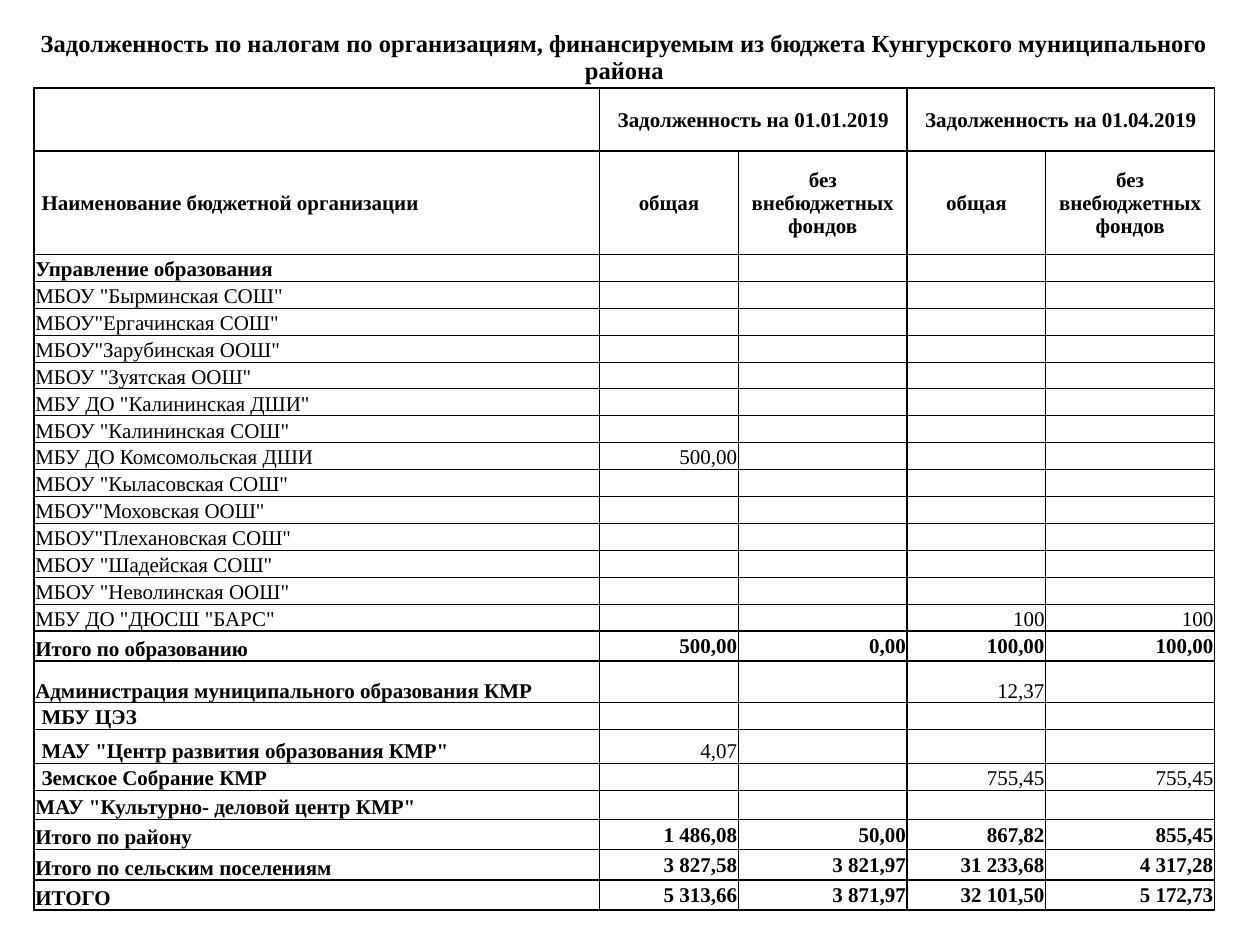
from pptx import Presentation, util as u
from pptx.dml.color import RGBColor
from pptx.enum import text
from pptx.oxml.ns import qn
from lxml import etree

FONT = "Times New Roman"
BLACK, WHITE = "000000", "FFFFFF"
THIN, THICK = 0.5, 1


def color(value):
    return RGBColor.from_string(value)


def set_borders(cell, widths):
    """Draw left, right, top and bottom lines; a width of 0 means no line."""
    properties = cell._tc.get_or_add_tcPr()
    for index, (side, width) in enumerate(zip(("lnL", "lnR", "lnT", "lnB"), widths)):
        line = etree.Element(qn(f"a:{side}"), w=str(u.Pt(width)))
        if width:
            fill = etree.SubElement(line, qn("a:solidFill"))
            etree.SubElement(fill, qn("a:srgbClr"), val=BLACK)
        else:
            etree.SubElement(line, qn("a:noFill"))
        properties.insert(index, line)


# Table content: header rows, then one row per organisation
header = [
    ["Задолженность по налогам по организациям, финансируемым из бюджета "
     "Кунгурского муниципального района", "", "", "", ""],
    ["", "Задолженность на 01.01.2019", "", "Задолженность на 01.04.2019", ""],
    ["Наименование бюджетной организации"] + ["общая", "без внебюджетных фондов"] * 2,
]
empty = [""] * 4
education = [
    ["Управление образования", *empty],
    ['МБОУ "Бырминская СОШ"', *empty],
    ['МБОУ"Ергачинская СОШ"', *empty],
    ['МБОУ"Зарубинская ООШ"', *empty],
    ['МБОУ "Зуятская ООШ"', *empty],
    ['МБУ ДО "Калининская ДШИ"', *empty],
    ['МБОУ "Калининская СОШ"', *empty],
    ["МБУ ДО Комсомольская ДШИ", "500,00", "", "", ""],
    ['МБОУ "Кыласовская СОШ"', *empty],
    ['МБОУ"Моховская ООШ"', *empty],
    ['МБОУ"Плехановская СОШ"', *empty],
    ['МБОУ "Шадейская СОШ"', *empty],
    ['МБОУ "Неволинская ООШ"', *empty],
    ['МБУ ДО "ДЮСШ "БАРС"', "", "", "100", "100"],
]
summary = [
    ["Итого по образованию", "500,00", "0,00", "100,00", "100,00"],
    ["Администрация муниципального образования КМР", "", "", "12,37", ""],
    ["МБУ ЦЭЗ", *empty],
    ['МАУ "Центр развития образования КМР"', "4,07", "", "", ""],
    ["Земское Собрание КМР", "", "", "755,45", "755,45"],
    ['МАУ "Культурно- деловой центр КМР"', *empty],
    ["Итого по району", "1 486,08", "50,00", "867,82", "855,45"],
    ["Итого по сельским поселениям", "3 827,58", "3 821,97", "31 233,68", "4 317,28"],
    ["ИТОГО", "5 313,66", "3 871,97", "32 101,50", "5 172,73"],
]
rows = header + education + summary
column_widths = [4.49, 1.1, 1.34, 1.1, 1.34]
row_heights = ([0.49, 0.5, 0.82] + [2.9 / len(education)] * len(education)
               + [0.24, 0.33, 0.21, 0.27, 0.21, 0.23, 0.24, 0.24, 0.24])

# Row groups that share a look
first_body = len(header)
first_summary = first_body + len(education)
totals = {first_summary, *range(len(rows) - 3, len(rows))}
indented = {2, first_summary + 2, first_summary + 3, first_summary + 4}
thick_below = {0, 1, 2, first_summary - 1, len(rows) - 4} | totals

# Slide and table
presentation = Presentation()
presentation.slide_width, presentation.slide_height = u.Inches(10), u.Inches(7.5)
slide = presentation.slides.add_slide(presentation.slide_layouts[6])
table = slide.shapes.add_table(
    len(rows), len(column_widths), u.Inches(0.27), u.Inches(0.21),
    u.Inches(sum(column_widths)), u.Inches(sum(row_heights))).table
table.first_row = table.horz_banding = False
for column, width in zip(table.columns, column_widths):
    column.width = u.Inches(width)
for row, height in zip(table.rows, row_heights):
    row.height = u.Inches(height)

# Merged headings
table.cell(0, 0).merge(table.cell(0, 4))
for c in (1, 3):
    table.cell(1, c).merge(table.cell(1, c + 1))

for r, values in enumerate(rows):
    for c, value in enumerate(values):
        cell = table.cell(r, c)
        is_header = r < first_body
        is_name = c == 0

        # Fill and lines
        if is_name and first_body <= r < first_body + 11:
            cell.fill.solid()
            cell.fill.fore_color.rgb = color(WHITE)
        else:
            cell.fill.background()
        if r == 0:
            set_borders(cell, (0, 0, 0, THICK))
        else:
            set_borders(cell, (THIN if c in (2, 4) else THICK,
                               THIN if c in (1, 3) else THICK,
                               THICK if r - 1 in thick_below else THIN,
                               THICK if r in thick_below else THIN))

        # Text position
        cell.margin_left = u.Inches(0.06 if is_name and r in indented else 0.01)
        cell.margin_right = cell.margin_top = u.Inches(0.01)
        cell.margin_bottom = 0
        middle = is_header or (r in totals and not is_name)
        cell.vertical_anchor = (text.MSO_ANCHOR.MIDDLE if middle
                                else text.MSO_ANCHOR.BOTTOM)
        paragraph = cell.text_frame.paragraphs[0]
        if r == 0 or (is_header and not is_name):
            paragraph.alignment = text.PP_ALIGN.CENTER
        else:
            paragraph.alignment = text.PP_ALIGN.LEFT if is_name else text.PP_ALIGN.RIGHT

        # Text look; empty cells keep a small line so rows stay low
        if not value:
            etree.SubElement(paragraph._p, qn("a:endParaRPr"), sz="1200")
            continue
        paragraph.text = value
        font = paragraph.runs[0].font
        font.name = FONT
        font.size = u.Pt(14 if r == 0 else 12)
        font.bold = r <= first_body or r in totals or (is_name and r >= first_summary)
        font.color.rgb = color(BLACK)

presentation.save("out.pptx")
